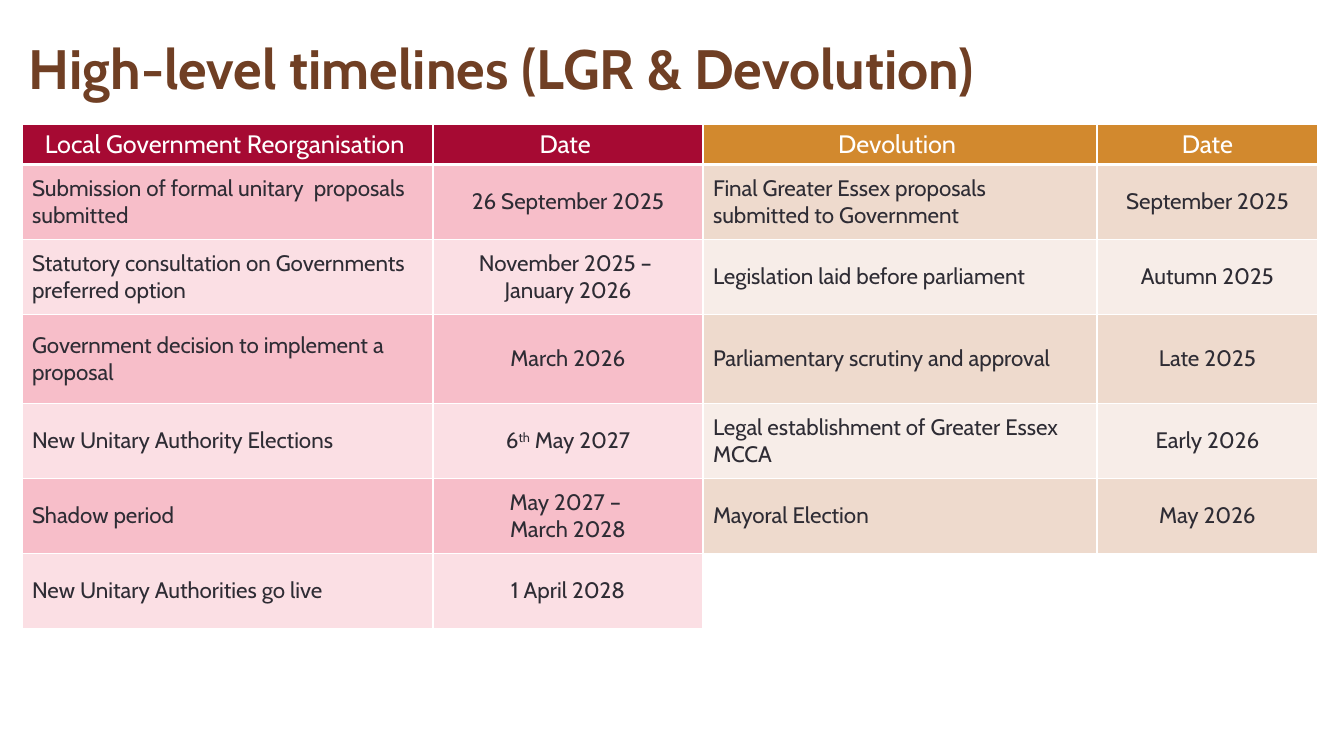
"""Build the slide of reorganisation and devolution timelines."""
from dataclasses import dataclass

from lxml.etree import SubElement
from pptx import Presentation
from pptx.dml.color import RGBColor
from pptx.enum.text import MSO_ANCHOR as Anchor, PP_ALIGN as Align
from pptx.oxml.ns import qn
from pptx.util import Pt

SCALE = 914400 / 100.8


def px(length):
    return round(length * SCALE)


@dataclass(frozen=True)
class Theme:
    font: str = "Cabin"
    title: str = "703F24"
    ink: str = "2E2C34"
    white: str = "FFFFFF"
    headers: tuple = ("A60A33", "D2892E")
    bands: tuple = (("F7BEC9", "FBDFE4"), ("EEDACD", "F7EDE8"))
    title_size: float = 39.6
    header_size: int = 18
    body_size: int = 16
    thin: int = 1
    thick: int = 3


class Sheet:
    def __init__(self, page, theme):
        self.page = page
        self.theme = theme

    def style(self, para, size, color, bold=False):
        for span in para.runs:
            span.font.name = self.theme.font
            span.font.size = Pt(size)
            span.font.bold = bold
            span.font.color.rgb = RGBColor.from_string(color)

    def title(self, text, left, top, width, height):
        box = self.page.shapes.add_textbox(px(left), px(top), px(width), px(height))
        frame = box.text_frame
        frame.word_wrap = True
        frame.vertical_anchor = Anchor.MIDDLE
        frame.text = text
        para = frame.paragraphs[0]
        para.line_spacing = 0.9
        self.style(para, self.theme.title_size, self.theme.title, bold=True)

    def border(self, cell, side, points):
        line = SubElement(cell._tc.get_or_add_tcPr(), qn(f"a:ln{side}"), w=str(Pt(points)))
        fill = SubElement(line, qn("a:solidFill"))
        SubElement(fill, qn("a:srgbClr"), val=self.theme.white)

    def fill_text(self, cell, text, size, color, align):
        cell.vertical_anchor = Anchor.MIDDLE
        cell.text_frame.text = text
        for para in cell.text_frame.paragraphs:
            para.alignment = align
            self.style(para, size, color)

    def raise_ordinal(self, cell, before, ordinal, after):
        para = cell.text_frame.paragraphs[0]
        para.runs[0].text = before
        for text in (ordinal, after):
            para.add_run().text = text
        self.style(para, self.theme.body_size, self.theme.ink)
        para.runs[1]._r.get_or_add_rPr().set("baseline", "30000")

    def cell(self, cell, text, row, column):
        theme = self.theme
        header, half = row == 0, column // 2
        for side in "LRTB":
            heavy = (side == "B" and header) or (side == "T" and row == 1)
            self.border(cell, side, theme.thick if heavy else theme.thin)
        color = theme.headers[half] if header else theme.bands[half][(row - 1) % 2]
        cell.fill.solid()
        cell.fill.fore_color.rgb = RGBColor.from_string(color if text else theme.white)
        self.fill_text(
            cell, text,
            theme.header_size if header else theme.body_size,
            theme.white if header else theme.ink,
            Align.CENTER if header or column % 2 else Align.LEFT)

    def table(self, rows, left, top, widths, heights):
        grid = self.page.shapes.add_table(
            len(rows), len(widths), px(left), px(top),
            px(sum(widths)), px(sum(heights))).table
        grid.first_row = grid.horz_banding = False
        for column, width in zip(grid.columns, widths):
            column.width = px(width)
        for line, height in zip(grid.rows, heights):
            line.height = px(height)
        for row, texts in enumerate(rows):
            for column, text in enumerate(texts):
                self.cell(grid.cell(row, column), text, row, column)
        return grid


TIMELINE = [
    ("Local Government Reorganisation ", "Date ", "Devolution ", "Date"),
    ("Submission of formal unitary  proposals submitted", "26 September 2025",
     "Final Greater Essex proposals submitted to Government", "September 2025"),
    ("Statutory consultation on Governments preferred option",
     "November 2025 – \nJanuary 2026",
     "Legislation laid before parliament", "Autumn 2025"),
    ("Government decision to implement a proposal", "March 2026",
     "Parliamentary scrutiny and approval", "Late 2025"),
    ("New Unitary Authority Elections", "6th May 2027",
     "Legal establishment of Greater Essex MCCA", "Early 2026"),
    ("Shadow period", "May 2027 – \nMarch 2028", "Mayoral Election", "May 2026"),
    ("New Unitary Authorities go live", "1 April 2028", "", ""),
]


def main():
    deck = Presentation()
    deck.slide_width, deck.slide_height = px(1344), px(756)
    sheet = Sheet(deck.slides.add_slide(deck.slide_layouts[6]), Theme())
    sheet.title("High-level timelines (LGR & Devolution)", 19, 39, 1296, 64)
    grid = sheet.table(TIMELINE, 22, 124, (411, 270, 394, 221),
                       (40, 75, 75, 89, 75, 75, 75))
    sheet.raise_ordinal(grid.cell(4, 1), "6", "th", " May 2027")
    deck.save("out.pptx")


if __name__ == "__main__":
    main()
